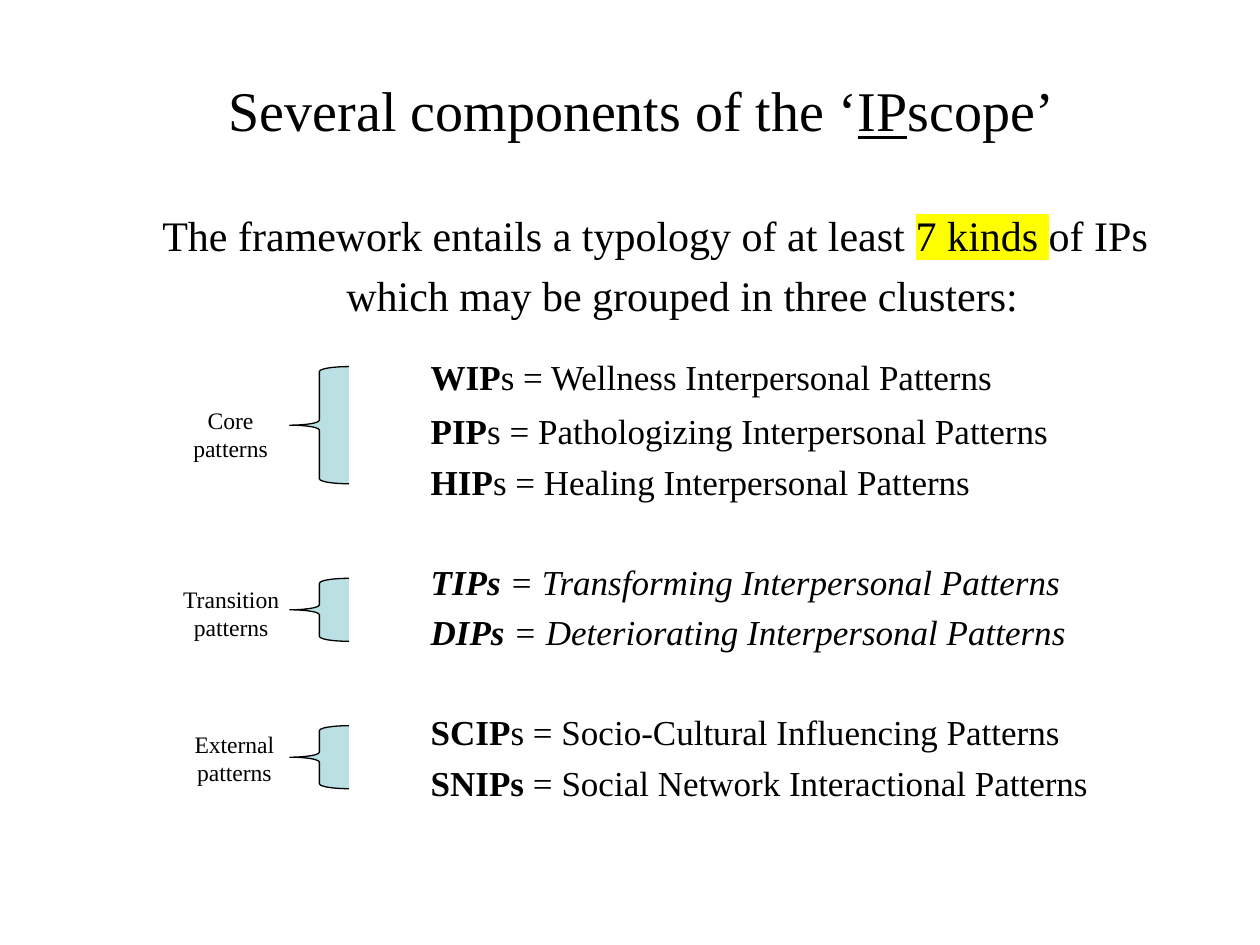
from lxml.etree import SubElement
from pptx import Presentation
from pptx.dml.color import RGBColor
from pptx.enum.shapes import MSO_SHAPE as Shape
from pptx.enum.text import MSO_ANCHOR as Anchor, PP_ALIGN as Align
from pptx.oxml.ns import qn
from pptx.util import Inches, Pt

FONT, INK, FILL, MARK = "Times New Roman", "000000", "BBE0E3", "FFFF00"

# A run is (text, styles): b bold, i italic, u underline, h highlight.
TITLE = [("Several components of the ‘", ""), ("IP", "u"), ("scope’", "")]
# (indent in inches, space before in points, runs)
INTRO = [
    (0.25, 2, [("The framework entails a typology of at least ", ""),
               ("7 kinds ", "h"), ("of IPs", "")]),
    (1.71, 6, [("which may be grouped in three clusters:", "")]),
]
# (label, label box, brace top, brace height, style, patterns)
CLUSTERS = [
    ("Core", (1.43, 3.17, 0.8), 2.91, 0.93, "", [
        ("WIP", "s = Wellness Interpersonal Patterns"),
        ("PIP", "s = Pathologizing Interpersonal Patterns"),
        ("HIP", "s = Healing Interpersonal Patterns")]),
    ("Transition", (1.35, 4.59, 0.97), 4.59, 0.5, "i", [
        ("TIPs", " = Transforming Interpersonal Patterns"),
        ("DIPs", " = Deteriorating Interpersonal Patterns")]),
    ("External", (1.44, 5.74, 0.84), 5.76, 0.5, "", [
        ("SCIP", "s = Socio-Cultural Influencing Patterns"),
        ("SNIPs", " = Social Network Interactional Patterns")]),
]
INDENT = 2.38
GAPS = {(0, 0): 20, (0, 1): 7}  # points above the first two patterns
HEAD_GAP, ROW_GAP = 33, 5


def color(code):
    return RGBColor.from_string(code)


def add_box(left, top, width, height, wrap=True):
    frame = slide.shapes.add_textbox(
        *map(Inches, (left, top, width, height))).text_frame
    frame.word_wrap = wrap
    return frame


def add_line(frame, runs, size, align=Align.LEFT, indent=0, before=0):
    """Fill the empty first paragraph, or add one below."""
    para = frame.paragraphs[0]
    if para.runs:
        para = frame.add_paragraph()
    para.alignment = align
    para.space_before = Pt(before)
    para.font.name, para.font.size = FONT, Pt(size)
    para.font.color.rgb = color(INK)
    if indent:
        para._p.get_or_add_pPr().set("marL", str(Inches(indent)))
    for text, style in runs:
        run = para.add_run()
        run.text = text
        if "b" in style:
            run.font.bold = True
        if "i" in style:
            run.font.italic = True
        if "u" in style:
            run.font.underline = True
        if "h" in style:
            mark = SubElement(run._r.get_or_add_rPr(), qn("a:highlight"))
            SubElement(mark, qn("a:srgbClr")).set("val", MARK)


def add_brace(top, height):
    brace = slide.shapes.add_shape(
        Shape.LEFT_BRACE, *map(Inches, (2.3, top, 0.47, height)))
    brace.shadow.inherit = False
    brace.fill.solid()
    brace.fill.fore_color.rgb = color(FILL)
    brace.line.color.rgb = color(INK)
    brace.line.width = Pt(0.75)


deck = Presentation()
deck.slide_width, deck.slide_height = Inches(10), Inches(7.5)
slide = deck.slides.add_slide(deck.slide_layouts[6])

title = add_box(0.84, 0.24, 8.5, 1.25)
title.vertical_anchor = Anchor.MIDDLE
add_line(title, TITLE, 32, Align.CENTER)

body = add_box(0.94, 1.61, 8.4, 4.67)
for indent, before, runs in INTRO:
    add_line(body, runs, 24, indent=indent, before=before)

for c, (name, place, top, height, style, patterns) in enumerate(CLUSTERS):
    for r, (short, rest) in enumerate(patterns):
        gap = GAPS.get((c, r), ROW_GAP if r else HEAD_GAP)
        add_line(body, [(short, "b" + style), (rest, style)], 20,
                 indent=INDENT, before=gap)
    add_brace(top, height)
    label = add_box(*place, 0.56, wrap=False)
    for word in (name, "patterns"):
        add_line(label, [(word, "")], 13.5, Align.CENTER)

deck.save("out.pptx")
